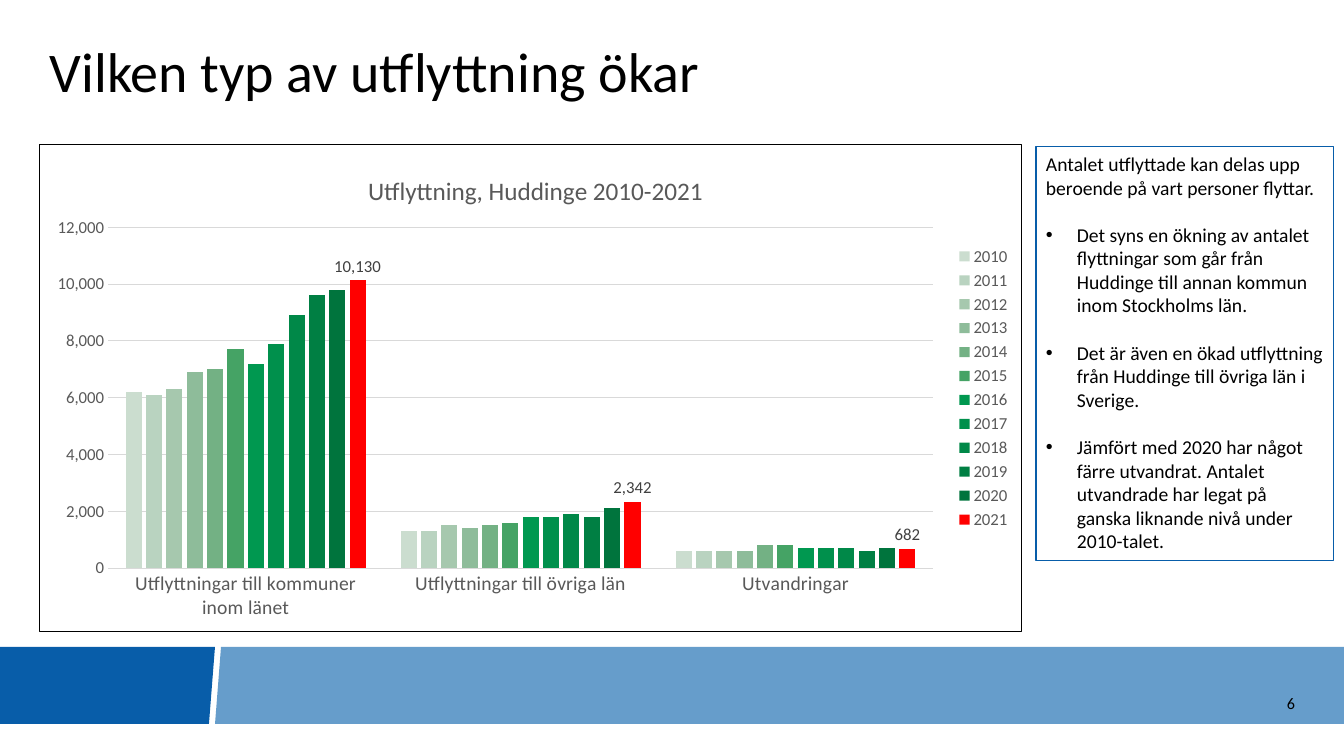
from pptx import Presentation
from pptx.chart.data import CategoryChartData
from pptx.dml.color import RGBColor
from pptx.enum.chart import XL_CHART_TYPE, XL_LABEL_POSITION, XL_LEGEND_POSITION, XL_TICK_MARK
from pptx.enum.shapes import MSO_SHAPE
from pptx.enum.text import MSO_ANCHOR, PP_ALIGN
from pptx.oxml import parse_xml
from pptx.oxml.ns import nsdecls, qn
from pptx.util import Pt

PX = 914400 / 100.8
FONT = "Calibri"
BLACK = RGBColor(0x00, 0x00, 0x00)
DARK_BLUE = RGBColor(0x08, 0x5D, 0xA9)
LIGHT_BLUE = RGBColor(0x66, 0x9D, 0xCB)
GRID_GREY = RGBColor(0xD9, 0xD9, 0xD9)
TEXT_GREY = RGBColor(0x59, 0x59, 0x59)
LABEL_GREY = RGBColor(0x40, 0x40, 0x40)
RED = RGBColor(0xFF, 0x00, 0x00)
YEAR_COLORS = [RGBColor.from_string(code) for code in (
    "CBDDCF", "B9D3C0", "A6C8AE", "8EBC9A", "73B184", "45A365",
    "009850", "00904C", "008848", "007F43", "00743D")] + [RED]

FIRST_YEAR = 2010
MOVES = {
    "Utflyttningar till kommuner inom länet":
        [6200, 6100, 6300, 6900, 7000, 7700, 7200, 7900, 8900, 9600, 9800, 10130],
    "Utflyttningar till övriga län":
        [1300, 1300, 1500, 1400, 1500, 1600, 1800, 1800, 1900, 1800, 2100, 2342],
    "Utvandringar":
        [600, 600, 600, 600, 800, 800, 700, 700, 700, 600, 700, 682],
}
INTRO = "Antalet utflyttade kan delas upp beroende på vart personer flyttar."
POINTS = [
    "Det syns en ökning av antalet flyttningar som går från Huddinge till annan kommun "
    "inom Stockholms län.",
    "Det är även en ökad utflyttning från Huddinge till övriga län i Sverige.",
    "Jämfört med 2020 har något färre utvandrat. Antalet utvandrade har legat på ganska "
    "liknande nivå under 2010-talet.",
]


def px(length):
    return round(length * PX)


def style_font(font, size, color):
    font.name = FONT
    font.size = Pt(size)
    font.bold = False
    font.color.rgb = color


def add_text(slide, box, text, size, align=PP_ALIGN.LEFT, anchor=MSO_ANCHOR.TOP):
    shape = slide.shapes.add_textbox(*map(px, box))
    text_frame = shape.text_frame
    text_frame.word_wrap = True
    text_frame.vertical_anchor = anchor
    text_frame.text = text
    paragraph = text_frame.paragraphs[0]
    paragraph.alignment = align
    style_font(paragraph.runs[0].font, size, BLACK)
    return paragraph


def add_band(slide, box, split, slant, gap):
    """Footer band of two pieces with a slanted gap between them."""
    left, top, width, height = box
    right, bottom = left + width, top + height
    pieces = [
        (LIGHT_BLUE, [(split + gap, top), (right, top), (right, bottom),
                      (split + gap - slant, bottom)]),
        (DARK_BLUE, [(left, top), (split, top), (split - slant, bottom), (left, bottom)]),
    ]
    for color, corners in pieces:
        builder = slide.shapes.build_freeform(*corners[0], scale=PX)
        builder.add_line_segments(corners[1:], close=True)
        shape = builder.convert_to_shape()
        shape.shadow.inherit = False
        shape.fill.solid()
        shape.fill.fore_color.rgb = color
        shape.line.fill.background()


def layout_xml(x, y, width=None, height=None):
    """Manual chart layout in fractions of the chart area."""
    parts = '<c:layoutTarget val="inner"/>' if width else ""
    parts += '<c:xMode val="edge"/><c:yMode val="edge"/>'
    for tag, value in (("x", x), ("y", y), ("w", width), ("h", height)):
        if value:
            parts += f'<c:{tag} val="{value}"/>'
    return parse_xml(f'<c:layout {nsdecls("c")}><c:manualLayout>{parts}'
                     '</c:manualLayout></c:layout>')


def place_chart_parts(chart):
    chart_element = chart.element.find(qn("c:chart"))
    title, plot_area = (chart_element.find(qn(tag)) for tag in ("c:title", "c:plotArea"))
    for part in (title, plot_area):
        for layout in part.findall(qn("c:layout")):
            part.remove(layout)
    title.find(qn("c:tx")).addnext(layout_xml(0.33, 0.05))
    plot_area.insert(0, layout_xml(0.07, 0.17, 0.84, 0.7))
    # Frame around the chart
    chart_element.addnext(parse_xml(
        f'<c:spPr {nsdecls("c", "a")}><a:noFill/><a:ln w="{Pt(0.75)}"><a:solidFill>'
        f'<a:srgbClr val="{BLACK}"/></a:solidFill></a:ln></c:spPr>'))


def add_moves_chart(slide, box):
    data = CategoryChartData(number_format="#,##0")
    data.categories = list(MOVES)
    for offset, values in enumerate(zip(*MOVES.values())):
        data.add_series(str(FIRST_YEAR + offset), values)
    chart = slide.shapes.add_chart(
        XL_CHART_TYPE.COLUMN_CLUSTERED, *map(px, box), data).chart
    style_font(chart.font, 12, BLACK)

    # Title and legend
    chart.has_title = True
    chart.chart_title.include_in_layout = False
    title_frame = chart.chart_title.text_frame
    title_frame.text = "Utflyttning, Huddinge 2010-2021"
    style_font(title_frame.paragraphs[0].runs[0].font, 18, TEXT_GREY)
    chart.has_legend = True
    chart.legend.position = XL_LEGEND_POSITION.RIGHT
    chart.legend.include_in_layout = False
    style_font(chart.legend.font, 12, TEXT_GREY)

    # Axes
    for axis, size in ((chart.category_axis, 14), (chart.value_axis, 12)):
        axis.major_tick_mark = axis.minor_tick_mark = XL_TICK_MARK.NONE
        style_font(axis.tick_labels.font, size, TEXT_GREY)
    value_axis = chart.value_axis
    value_axis.minimum_scale, value_axis.maximum_scale = 0, 12000
    value_axis.major_unit = 2000
    value_axis.tick_labels.number_format = "#,##0"
    value_axis.tick_labels.number_format_is_linked = False
    value_axis.format.line.fill.background()
    for line in (chart.category_axis.format.line, value_axis.major_gridlines.format.line):
        line.color.rgb = GRID_GREY
        line.width = Pt(0.75)

    # Columns, with values on the last year
    plot = chart.plots[0]
    plot.vary_by_categories = False
    plot.gap_width = 219
    plot.overlap = -27
    for series, color in zip(plot.series, YEAR_COLORS):
        series.format.fill.solid()
        series.format.fill.fore_color.rgb = color
    labels = plot.series[-1].data_labels
    labels.show_value = True
    labels.position = XL_LABEL_POSITION.OUTSIDE_END
    labels.number_format = "#,##0"
    labels.number_format_is_linked = False
    style_font(labels.font, 12, LABEL_GREY)
    place_chart_parts(chart)


def add_comments(slide, box):
    shape = slide.shapes.add_shape(MSO_SHAPE.RECTANGLE, *map(px, box))
    shape.shadow.inherit = False
    shape.fill.background()
    shape.line.color.rgb = DARK_BLUE
    shape.line.width = Pt(0.75)
    text_frame = shape.text_frame
    text_frame.word_wrap = True
    text_frame.vertical_anchor = MSO_ANCHOR.TOP
    text_frame.text = "\n".join([INTRO, *POINTS])
    for index, paragraph in enumerate(text_frame.paragraphs):
        paragraph.alignment = PP_ALIGN.LEFT
        if index:
            paragraph.space_before = Pt(17)
            properties = paragraph._p.get_or_add_pPr()
            properties.set("marL", str(px(31)))
            properties.set("indent", str(-px(31)))
            properties.append(parse_xml(f'<a:buFont {nsdecls("a")} typeface="Arial"/>'))
            properties.append(parse_xml(f'<a:buChar {nsdecls("a")} char="•"/>'))
        style_font(paragraph.runs[0].font, 14, BLACK)


def main():
    presentation = Presentation()
    presentation.slide_width, presentation.slide_height = px(1344), px(756)
    slide = presentation.slides.add_slide(presentation.slide_layouts[6])
    add_band(slide, (0, 647, 1344, 77), split=215, slant=6, gap=6)
    title = add_text(slide, (40, 39, 1248, 81), "Vilken typ av utflyttning ökar", 40)
    title.line_spacing = 0.9
    add_text(slide, (1145, 683, 160, 40), "6", 11.5, PP_ALIGN.RIGHT, MSO_ANCHOR.MIDDLE)
    add_comments(slide, (1036, 147, 298, 414))
    add_moves_chart(slide, (39, 144, 983, 488))
    presentation.save("out.pptx")


if __name__ == "__main__":
    main()
